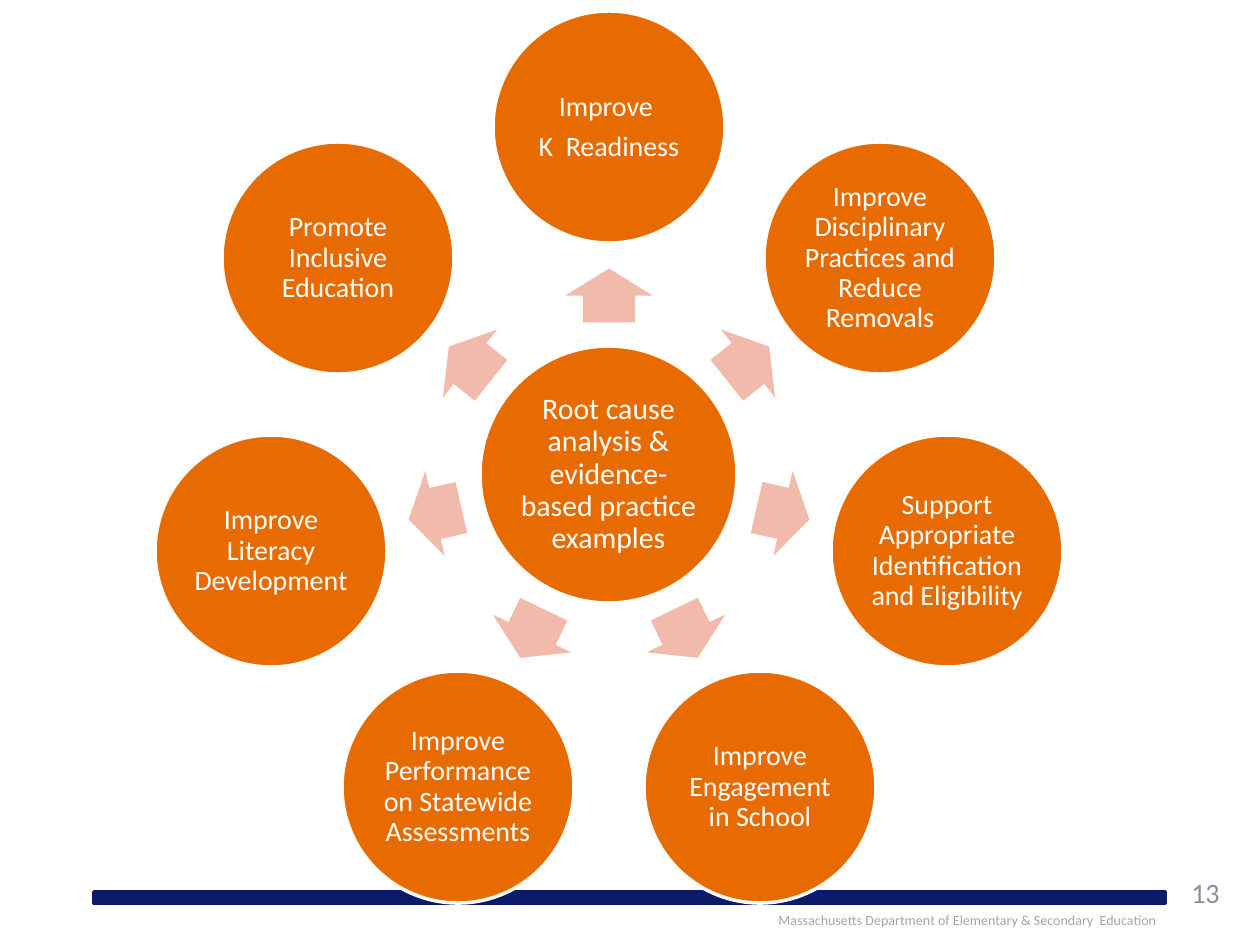
import math
from dataclasses import dataclass

from pptx import Presentation
from pptx import util as u
from pptx.dml.color import RGBColor
from pptx.enum import shapes, text


@dataclass(frozen=True)
class Theme:
    font: str = "Calibri"
    orange: str = "E86B01"
    pink: str = "F2BAAB"
    navy: str = "0D1969"
    white: str = "FFFFFF"
    footer_gray: str = "A6A6A6"
    number_gray: str = "8C8CA1"
    hub_size: int = 17
    goal_size: int = 16
    number_size: int = 16
    footer_size: int = 8
    outline: int = 2


@dataclass(frozen=True)
class Box:
    left: int
    top: int
    width: int
    height: int


@dataclass(frozen=True)
class Disc:
    x: int
    y: int
    diameter: int
    lines: tuple[str, ...]
    size: int


THEME = Theme()
PX_PER_INCH = 126
CENTER_X, CENTER_Y = 609, 474
GOAL_RADIUS, ARROW_RADIUS = 347, 178
HUB_DIAMETER, GOAL_DIAMETER = 257, 232
ARROW_LENGTH, ARROW_WIDTH = 54, 87
TEXT_INSET = 3

HUB = ("Root cause analysis & evidence-based practice examples",)
GOALS = (
    ("Improve ", "K  Readiness"),
    ("Improve Disciplinary Practices and Reduce Removals",),
    ("Support Appropriate Identification and Eligibility",),
    ("Improve Engagement in School",),
    ("Improve Performance on Statewide Assessments",),
    ("Improve Literacy Development",),
    ("Promote Inclusive Education",),
)
BARS = (Box(777, 892, 388, 11), Box(94, 892, 683, 11))


def px(length: int) -> u.Emu:
    return u.Emu(round(length * u.Inches(1) / PX_PER_INCH))


def place(box: Box) -> tuple[u.Emu, ...]:
    return px(box.left), px(box.top), px(box.width), px(box.height)


def around(x: int, y: int, width: int, height: int) -> Box:
    return Box(round(x - width / 2), round(y - height / 2), width, height)


def on_ring(radius: int, angle: float) -> tuple[int, int]:
    turn = math.radians(angle)
    return (round(CENTER_X + radius * math.cos(turn)),
            round(CENTER_Y + radius * math.sin(turn)))


def add_shape(slide, kind, box: Box, fill: str, line: str | None = None):
    shape = slide.shapes.add_shape(kind, *place(box))
    shape.shadow.inherit = False
    shape.fill.solid()
    shape.fill.fore_color.rgb = RGBColor.from_string(fill)
    if line is None:
        shape.line.fill.background()
    else:
        shape.line.color.rgb = RGBColor.from_string(line)
        shape.line.width = u.Pt(THEME.outline)
    return shape


def format_paragraph(paragraph, size: int, color: str, alignment) -> None:
    paragraph.alignment = alignment
    paragraph.font.name = THEME.font
    paragraph.font.size = u.Pt(size)
    paragraph.font.color.rgb = RGBColor.from_string(color)


def add_label(slide, box: Box, wording: str, size: int, color: str,
              alignment, anchor) -> None:
    frame = slide.shapes.add_textbox(*place(box)).text_frame
    frame.word_wrap = True
    frame.vertical_anchor = anchor
    frame.text = wording
    format_paragraph(frame.paragraphs[0], size, color, alignment)


def add_disc(slide, disc: Disc) -> None:
    box = around(disc.x, disc.y, disc.diameter, disc.diameter)
    shape = add_shape(slide, shapes.MSO_SHAPE.OVAL, box, THEME.orange, THEME.white)
    frame = shape.text_frame
    frame.word_wrap = True
    frame.vertical_anchor = text.MSO_ANCHOR.MIDDLE
    frame.margin_left = frame.margin_right = px(TEXT_INSET)
    frame.margin_top = frame.margin_bottom = px(TEXT_INSET)
    frame.text = "\n".join(disc.lines)
    for paragraph in frame.paragraphs:
        format_paragraph(paragraph, disc.size, THEME.white, text.PP_ALIGN.CENTER)
        paragraph.line_spacing = 0.9
        paragraph.space_after = u.Pt(round(disc.size * 0.35, 1))


def add_arrow(slide, angle: float) -> None:
    x, y = on_ring(ARROW_RADIUS, angle)
    box = around(x, y, ARROW_LENGTH, ARROW_WIDTH)
    arrow = add_shape(slide, shapes.MSO_SHAPE.RIGHT_ARROW, box, THEME.pink)
    arrow.adjustments[0] = 0.6
    arrow.adjustments[1] = 0.5
    arrow.rotation = angle % 360


def main() -> None:
    presentation = Presentation()
    presentation.slide_width = px(1260)
    presentation.slide_height = px(945)
    slide = presentation.slides.add_slide(presentation.slide_layouts[6])

    for bar in BARS:
        add_shape(slide, shapes.MSO_SHAPE.RECTANGLE, bar, THEME.navy, THEME.navy)
    add_label(slide, Box(766, 905, 410, 30),
              "Massachusetts Department of Elementary & Secondary  Education",
              THEME.footer_size, THEME.footer_gray,
              text.PP_ALIGN.LEFT, text.MSO_ANCHOR.TOP)
    add_label(slide, Box(1169, 861, 73, 63), "13",
              THEME.number_size, THEME.number_gray,
              text.PP_ALIGN.CENTER, text.MSO_ANCHOR.MIDDLE)

    add_disc(slide, Disc(CENTER_X, CENTER_Y, HUB_DIAMETER, HUB, THEME.hub_size))
    for index, lines in enumerate(GOALS):
        angle = index * 360 / len(GOALS) - 90
        add_arrow(slide, angle)
        x, y = on_ring(GOAL_RADIUS, angle)
        add_disc(slide, Disc(x, y, GOAL_DIAMETER, lines, THEME.goal_size))

    presentation.save("out.pptx")


if __name__ == "__main__":
    main()
